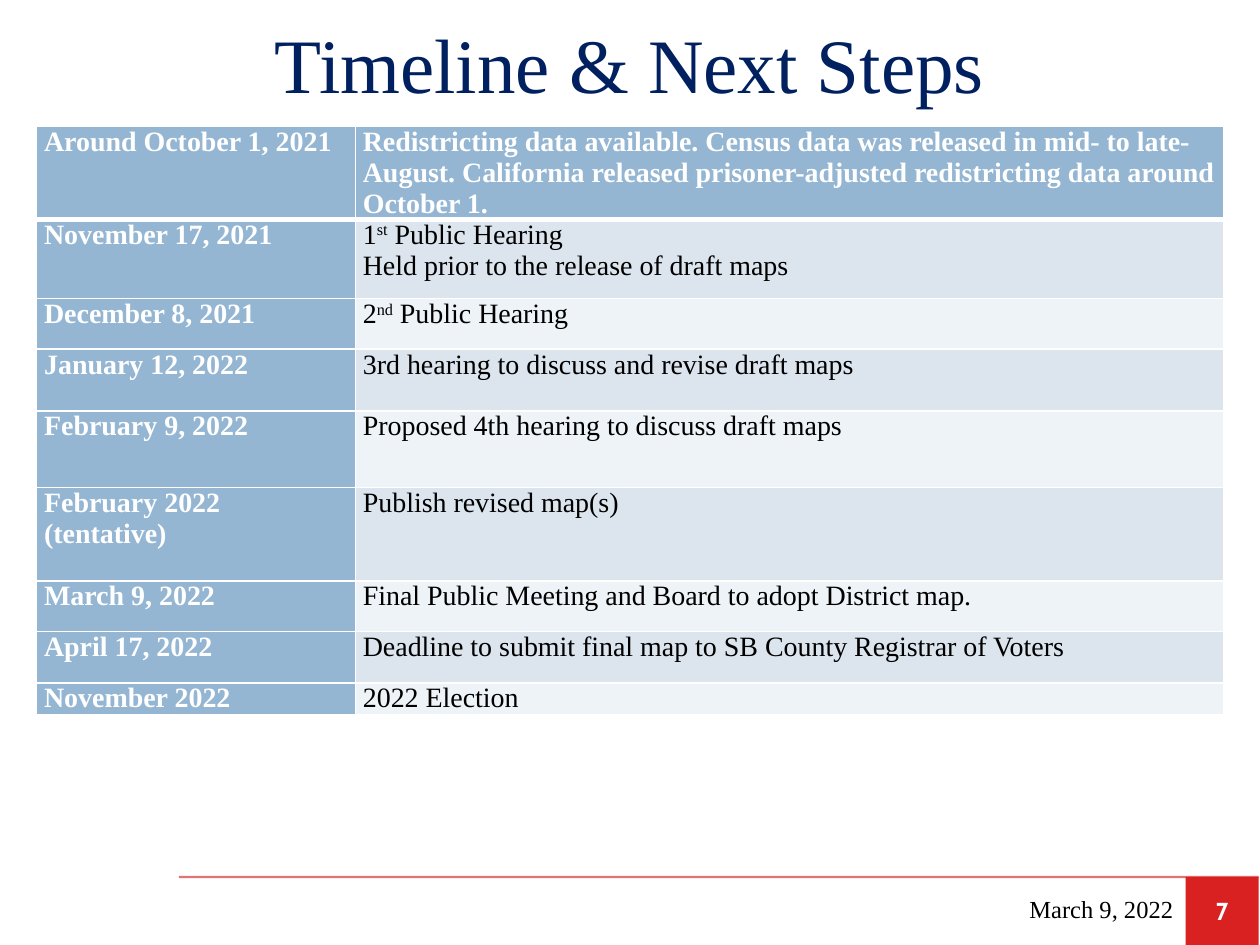
from dataclasses import dataclass

from lxml.etree import SubElement
from pptx import Presentation
from pptx.dml.color import RGBColor as Color
from pptx.enum.shapes import MSO_CONNECTOR as Connector, MSO_SHAPE as Shape
from pptx.enum.text import MSO_ANCHOR as Anchor, PP_ALIGN as Align
from pptx.oxml.ns import qn
from pptx.util import Inches, Pt


@dataclass(frozen=True)
class Theme:
    serif: str = "Times New Roman"
    sans: str = "Cabin"
    navy: str = "002060"
    black: str = "000000"
    white: str = "FFFFFF"
    red: str = "D92121"
    rule: str = "C80000"
    header: str = "94B6D2"
    bands: tuple = ("EEF3F7", "DCE5EE")
    title_size: int = 44
    table_size: int = 16
    footer_size: int = 14


THEME = Theme()

TIMELINE = [
    ("Around October 1, 2021", 0.74,
     ["Redistricting data available. Census data was released in mid- to late-August. "
      "California released prisoner-adjusted redistricting data around October 1."]),
    ("November 17, 2021", 0.63,
     ["1^st^ Public Hearing", "Held prior to the release of draft maps"]),
    ("December 8, 2021", 0.4, ["2^nd^ Public Hearing"]),
    ("January 12, 2022", 0.49, ["3rd hearing to discuss and revise draft maps"]),
    ("February 9, 2022", 0.61, ["Proposed 4th hearing to discuss draft maps"]),
    ("February 2022 (tentative)", 0.74, ["Publish revised map(s)"]),
    ("March 9, 2022", 0.4, ["Final Public Meeting and Board to adopt District map."]),
    ("April 17, 2022", 0.41,
     ["Deadline to submit final map to SB County Registrar of Voters"]),
    ("November 2022", 0.25, ["2022 Election"]),
]


def apply(target, values):
    for name, value in values.items():
        setattr(target, name, value)


def place(box, left, top, width, height):
    apply(box, {"left": Inches(left), "top": Inches(top),
                "width": Inches(width), "height": Inches(height)})


def write(frame, lines, size, color, bold=False, face=THEME.serif, align=Align.LEFT):
    for index, line in enumerate(lines):
        para = frame.add_paragraph() if index else frame.paragraphs[0]
        para.alignment = align
        for position, piece in enumerate(line.split("^")):
            span = para.add_run()
            span.text = piece
            apply(span.font, {"size": Pt(size), "bold": bold, "name": face})
            span.font.color.rgb = Color.from_string(color)
            if position % 2:
                span.font._element.set("baseline", "30000")


def fill(target, color):
    target.fill.solid()
    target.fill.fore_color.rgb = Color.from_string(color)


def set_borders(cell, widths):
    properties = cell._tc.get_or_add_tcPr()
    for side in "LRTB":
        edge = SubElement(properties, qn(f"a:ln{side}"), w=str(Pt(widths.get(side, 1))))
        paint = SubElement(edge, qn("a:solidFill"))
        SubElement(paint, qn("a:srgbClr"), val=THEME.white)


def add_title(slide, text, left, top, width, height):
    title = slide.shapes.title
    place(title, left, top, width, height)
    apply(title.text_frame, {"vertical_anchor": Anchor.MIDDLE, "word_wrap": True})
    write(title.text_frame, [text], THEME.title_size, THEME.navy, align=Align.CENTER)


def add_timeline(slide, left, top, width, date_width):
    heights = [height for _, height, _ in TIMELINE]
    table = slide.shapes.add_table(len(TIMELINE), 2, Inches(left), Inches(top),
                                   Inches(width), Inches(sum(heights))).table
    for column, size in zip(table.columns, (date_width, width - date_width)):
        column.width = Inches(size)
    margins = {"margin_left": Inches(0.06), "margin_right": Inches(0.06),
               "margin_top": 0, "margin_bottom": 0}
    for index, (date, height, lines) in enumerate(TIMELINE):
        table.rows[index].height = Inches(height)
        for column, content in enumerate(([date], lines)):
            cell = table.cell(index, column)
            apply(cell, margins)
            set_borders(cell, {0: {"B": 3}, 1: {"T": 3}}.get(index, {}))
            strong = index == 0 or column == 0
            fill(cell, THEME.header if strong else THEME.bands[index % 2])
            write(cell.text_frame, content, THEME.table_size,
                  THEME.white if strong else THEME.black, bold=strong)


def add_footer(slide, date, number, left, top, right, height):
    badge_width = 0.58
    badge_left = right - badge_width
    rule = slide.shapes.add_connector(Connector.STRAIGHT, Inches(left), Inches(top),
                                      Inches(right), Inches(top))
    rule.line.width = Pt(1.25)
    rule.line.color.rgb = Color.from_string(THEME.rule)
    tint = rule._element.spPr.find(".//" + qn("a:srgbClr"))
    SubElement(tint, qn("a:alpha"), val="55000")
    SubElement(rule._element.spPr, qn("a:effectLst"))

    badge = slide.shapes.add_shape(Shape.RECTANGLE, Inches(badge_left), Inches(top),
                                   Inches(badge_width), Inches(height))
    badge.shadow.inherit = False
    fill(badge, THEME.red)
    badge.line.fill.background()
    badge.text_frame.vertical_anchor = Anchor.MIDDLE
    write(badge.text_frame, [number], THEME.footer_size, THEME.white, bold=True,
          face=THEME.sans, align=Align.CENTER)

    date_width = 2.92
    label = slide.shapes.add_textbox(Inches(badge_left - date_width), Inches(top + 0.05),
                                     Inches(date_width), Inches(0.4))
    apply(label.text_frame, {"word_wrap": True, "vertical_anchor": Anchor.MIDDLE})
    write(label.text_frame, [date], THEME.footer_size, THEME.black, align=Align.RIGHT)


def main():
    deck = Presentation()
    apply(deck, {"slide_width": Inches(10), "slide_height": Inches(7.5)})
    slide = deck.slides.add_slide(deck.slide_layouts[5])
    add_title(slide, "Timeline & Next Steps", 0, 0, 10, 1)
    add_timeline(slide, 0.29, 1, 9.42, 2.53)
    add_footer(slide, "March 9, 2022", "7", 1.42, 6.96, 9.99, 0.54)
    deck.save("out.pptx")


if __name__ == "__main__":
    main()
